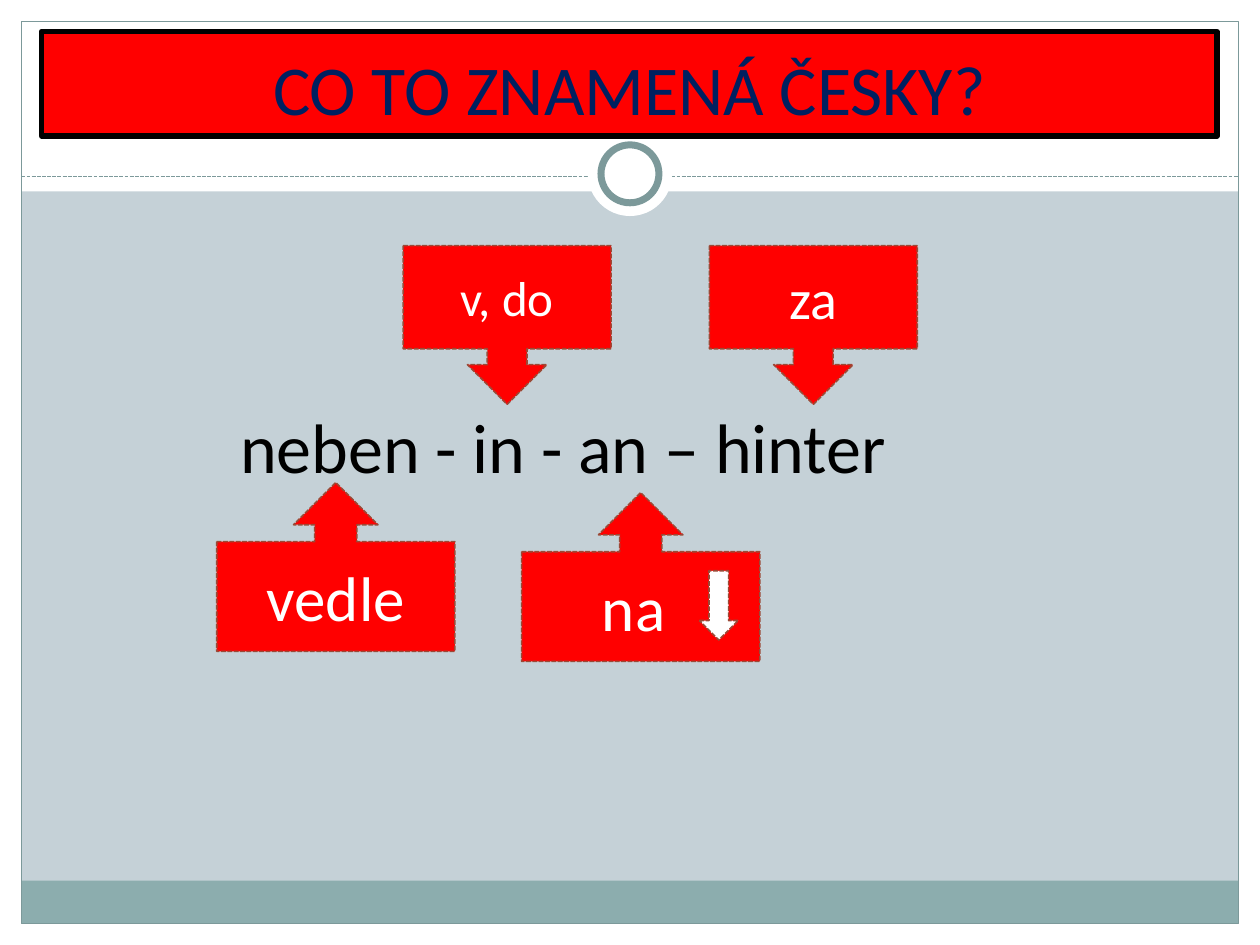
import pptx
import pptx.util
import pptx.dml.color
import pptx.enum.dml
import pptx.enum.shapes
import pptx.enum.text
import pptx.oxml.ns
import lxml.etree

Inches = pptx.util.Inches
Pt = pptx.util.Pt
KIND = pptx.enum.shapes.MSO_SHAPE
ANCHOR = pptx.enum.text.MSO_ANCHOR
DASH = pptx.enum.dml.MSO_LINE.SQUARE_DOT

WIDTH, HEIGHT = 10, 7.5
EDGE = 0.17
INNER = WIDTH - 2 * EDGE
WHITE, RED, TEAL = "FFFFFF", "FF0000", "7C999A"
CALLOUT_LINE = ("9B4936", 0.9, DASH)

BANDS = [
    ((0, HEIGHT - EDGE, WIDTH, EDGE), WHITE),
    ((0, 0, WIDTH, 1.52), WHITE),
    ((0, 0, EDGE, HEIGHT), WHITE),
    ((WIDTH - EDGE, 0, EDGE, HEIGHT), WHITE),
    ((EDGE, 6.99, INNER, 0.34), "8CADAE"),
]
RINGS = [(0.67, None), (0.46, (TEAL, 4, None))]
RING_MIDDLE = 1.38
TITLE = "CO TO ZNAMENÁ ČESKY?"
PREPOSITIONS = "neben - in - an – hinter"
UP = (KIND.UP_ARROW_CALLOUT, 1.89, 1.34)
DOWN = (KIND.DOWN_ARROW_CALLOUT, 1.65, 1.26)
CALLOUTS = [
    ("vedle", 36, UP, 1.72, 3.83),
    ("na ", 36, UP, 4.14, 3.91),
    ("v, do", 28, DOWN, 3.2, 1.95),
    ("za", 32, DOWN, 5.63, 1.95),
]


def color(value):
    return pptx.dml.color.RGBColor.from_string(value)


def apply(target, values):
    for name, value in values.items():
        setattr(target, name, value)


def style_line(line, style):
    if style is None:
        line.fill.background()
        return
    line.color.rgb = color(style[0])
    apply(line, {"width": Pt(style[1]), "dash_style": style[2]})


def add_shape(page, kind, place, fill=None, line=None):
    shape = page.shapes.add_shape(kind, *map(Inches, place))
    shape.shadow.inherit = False
    if fill:
        shape.fill.solid()
        shape.fill.fore_color.rgb = color(fill)
    else:
        shape.fill.background()
    style_line(shape.line, line)
    return shape


def write(shape, text, size, tint, **frame_values):
    frame = shape.text_frame
    apply(frame, {"word_wrap": True, **frame_values})
    para = frame.paragraphs[0]
    para.alignment = pptx.enum.text.PP_ALIGN.CENTER
    span = para.add_run()
    span.text = text
    apply(span.font, {"name": "Calibri", "size": Pt(size)})
    span.font.color.rgb = color(tint)


def add_frame(page):
    for place, fill in BANDS:
        add_shape(page, KIND.RECTANGLE, place, fill)
    add_shape(page, KIND.RECTANGLE, (EDGE, EDGE, INNER, HEIGHT - 2 * EDGE),
              line=(TEAL, 0.75, None))
    divider = page.shapes.add_connector(
        pptx.enum.shapes.MSO_CONNECTOR.STRAIGHT,
        *map(Inches, (EDGE, 1.4, WIDTH - EDGE, 1.4)))
    style_line(divider.line, (TEAL, 0.75, DASH))
    lxml.etree.SubElement(divider._element.spPr, pptx.oxml.ns.qn("a:effectLst"))
    for size, line in RINGS:
        place = ((WIDTH - size) / 2, RING_MIDDLE - size / 2, size, size)
        add_shape(page, KIND.OVAL, place, WHITE, line)


def main():
    deck = pptx.Presentation()
    apply(deck, {"slide_width": Inches(WIDTH), "slide_height": Inches(HEIGHT)})
    page = deck.slides.add_slide(deck.slide_layouts[6])
    page.background.fill.solid()
    page.background.fill.fore_color.rgb = color("C5D1D7")
    add_frame(page)

    title = add_shape(page, KIND.RECTANGLE, (0.33, 0.25, 9.33, 0.83), RED,
                      ("000000", 3, None))
    write(title, TITLE, 40, "002060", vertical_anchor=ANCHOR.BOTTOM)

    body = page.shapes.add_textbox(*map(Inches, (0, 1.75, 9.22, 5.59)))
    write(body, PREPOSITIONS, 40, "000000", vertical_anchor=ANCHOR.TOP,
          margin_top=Inches(1.45), margin_right=Inches(0.38))

    for text, size, (kind, width, height), left, top in CALLOUTS:
        callout = add_shape(page, kind, (left, top, width, height), RED, CALLOUT_LINE)
        write(callout, text, size, WHITE, vertical_anchor=ANCHOR.MIDDLE)

    add_shape(page, KIND.DOWN_ARROW, (5.55, 4.53, 0.31, 0.55), WHITE, CALLOUT_LINE)
    deck.save("out.pptx")


if __name__ == "__main__":
    main()
